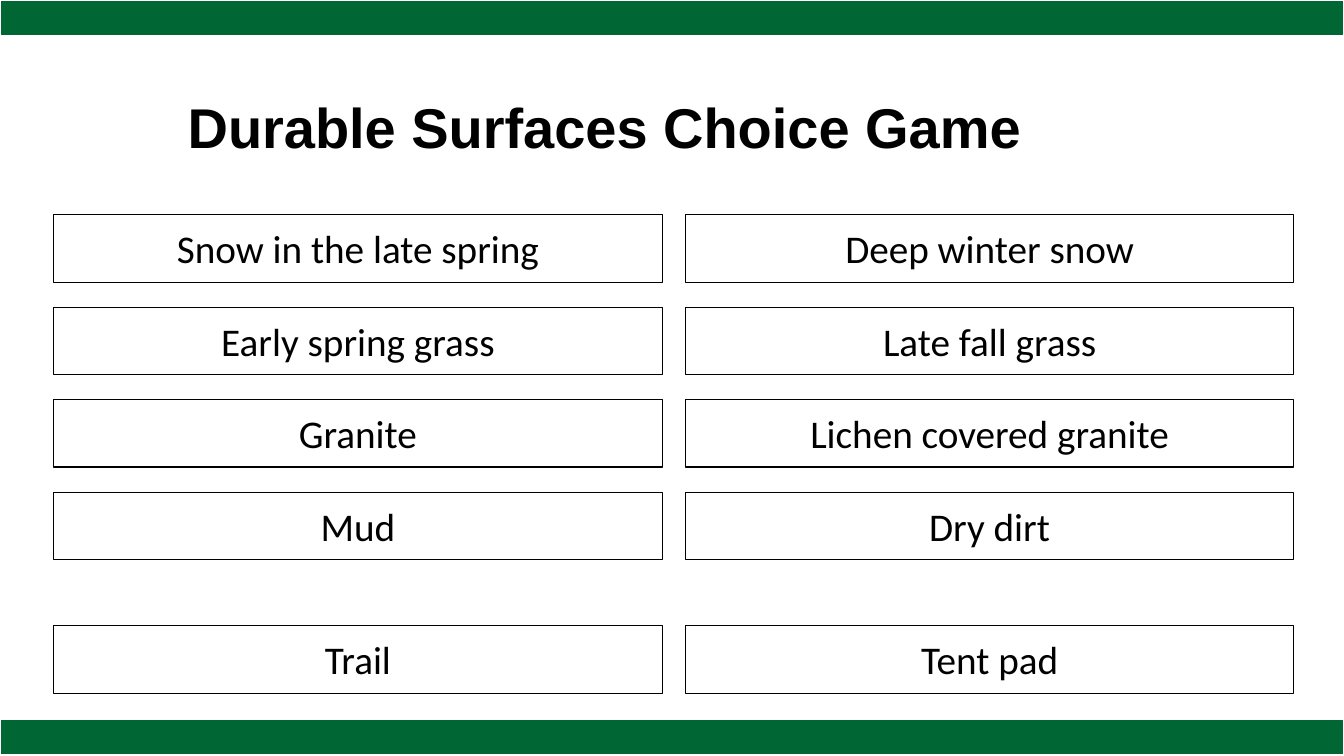
from pptx import Presentation
from pptx.dml.color import RGBColor
from pptx.enum.shapes import MSO_SHAPE as Shape
from pptx.enum.text import MSO_ANCHOR as Anchor, MSO_AUTO_SIZE as AutoSize, PP_ALIGN as Align
from pptx.util import Cm, Pt

GREEN = RGBColor(0x00, 0x66, 0x33)
BLACK = RGBColor(0x00, 0x00, 0x00)

COLUMN_LEFTS = (1.35, 17.27)
FIRST_TOP, ROW_PITCH = 5.41, 2.33
LAST_TOP = 15.77
CHOICES = [
    ("Snow in the late spring", "Deep winter snow"),
    ("Early spring grass", "Late fall grass"),
    ("Granite", "Lichen covered granite"),
    ("Mud", "Dry dirt"),
    ("Trail", "Tent pad"),
]


def write_text(box, text, font="Calibri", size=28, bold=False, align=Align.CENTER,
               anchor=Anchor.TOP, inset=0.25, fit=AutoSize.NONE):
    frame = box.text_frame
    frame.word_wrap = True
    frame.auto_size = fit
    frame.vertical_anchor = anchor
    frame.margin_left = frame.margin_right = Cm(inset)
    frame.margin_top = frame.margin_bottom = Cm(inset)
    para = frame.paragraphs[0]
    para.alignment = align
    span = para.add_run()
    span.text = text
    span.font.name = font
    span.font.size = Pt(size)
    span.font.bold = bold
    span.font.color.rgb = BLACK


def add_box(page, left, top, width, height, line, fill=None):
    box = page.shapes.add_shape(Shape.RECTANGLE, Cm(left), Cm(top), Cm(width), Cm(height))
    box.shadow.inherit = False
    if fill is None:
        box.fill.background()
    else:
        box.fill.solid()
        box.fill.fore_color.rgb = fill
    box.line.color.rgb = line
    box.line.width = Pt(0.75)
    return box


def add_title(page, text):
    title = page.shapes.title
    title.left, title.top, title.width, title.height = Cm(4.6), Cm(1.6), Cm(27.08), Cm(3.18)
    write_text(title, text, font="Arial", size=40, bold=True, align=Align.LEFT,
               anchor=Anchor.MIDDLE, inset=0.13)


def add_choice(page, left, top, text):
    box = add_box(page, left, top, 15.34, 1.7, BLACK)
    write_text(box, text, fit=AutoSize.SHAPE_TO_FIT_TEXT)


def main():
    deck = Presentation()
    deck.slide_width, deck.slide_height = Cm(33.87), Cm(19.05)
    page = deck.slides.add_slide(deck.slide_layouts[5])

    # Green bands at the top and bottom edges
    for top in (0.03, 18.16):
        add_box(page, 0.03, top, 33.81, 0.84, GREEN, fill=GREEN)

    add_title(page, "Durable Surfaces Choice Game")

    # Pairs of surfaces, the last one set apart
    tops = [FIRST_TOP + row * ROW_PITCH for row in range(len(CHOICES) - 1)] + [LAST_TOP]
    for top, pair in zip(tops, CHOICES):
        for left, surface in zip(COLUMN_LEFTS, pair):
            add_choice(page, left, top, surface)

    deck.save("out.pptx")


if __name__ == "__main__":
    main()
